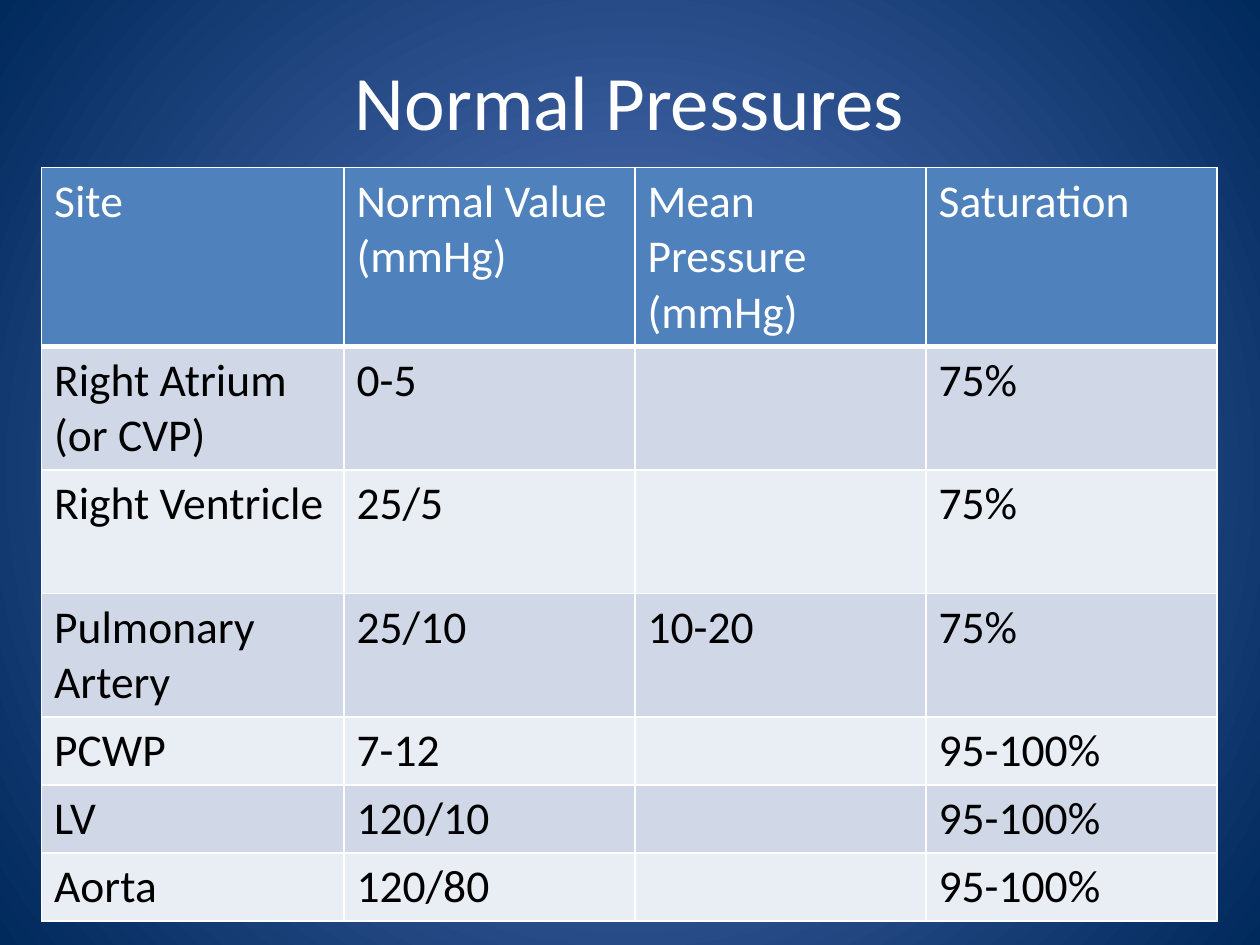
"""Build a slide with a table of normal heart pressures."""
from dataclasses import dataclass

from pptx import Presentation
from pptx.dml.color import RGBColor
from pptx.enum.text import MSO_ANCHOR, PP_ALIGN
from pptx.oxml import parse_xml
from pptx.oxml.ns import nsdecls, qn
from pptx.util import Inches, Pt

MIDDLE = MSO_ANCHOR.MIDDLE
CENTER = PP_ALIGN.CENTER
WIDE, HIGH = Inches(10), Inches(7.5)
WHITE, BLACK = "FFFFFF", "000000"
GLOW, NAVY = "5E7CC5", "00295C"
HEAD, BANDS = "4F81BD", ("D0D8E8", "E9EDF4")
COLS = (2.4, 2.31, 2.31, 2.31)
LINES = {1: 0.54, 2: 0.98, 3: 1.42}
THIN, THICK = 1, 3


@dataclass(frozen=True)
class Row:
    """One table row: its cells and its height in lines of text."""
    site: str
    value: str
    mean: str
    sat: str
    lines: int = 1

    def cells(self) -> tuple[str, ...]:
        """Give the texts from left to right."""
        return self.site, self.value, self.mean, self.sat


ROWS = (
    Row("Site", "Normal Value (mmHg)", "Mean Pressure (mmHg)", "Saturation", 3),
    Row("Right Atrium (or CVP)", "0-5", "", "75%", 2),
    Row("Right Ventricle", "25/5", "", "75%", 2),
    Row("Pulmonary Artery", "25/10", "10-20", "75%", 2),
    Row("PCWP", "7-12", "", "95-100%"),
    Row("LV", "120/10", "", "95-100%"),
    Row("Aorta", "120/80", "", "95-100%"),
)


def color(code: str) -> RGBColor:
    """Turn a hex string into a colour."""
    return RGBColor.from_string(code)


def write(frame, text: str, size: int, code: str) -> None:
    """Put one styled paragraph into a text frame."""
    para = frame.paragraphs[0]
    para.text = text
    style = {"name": "Calibri", "size": Pt(size), "bold": False}
    for key, value in style.items():
        setattr(para.font, key, value)
    para.font.color.rgb = color(code)


def paint(slide) -> None:
    """Fill the background with a round glow."""
    fill = slide.background.fill
    fill.gradient()
    for stop, code, place in zip(fill.gradient_stops, (GLOW, NAVY), (0, 1)):
        stop.color.rgb = color(code)
        stop.position = place
    grad = slide.element.find(".//" + qn("a:gradFill"))
    grad.replace(grad.find(qn("a:lin")), parse_xml(
        f'<a:path {nsdecls("a")} path="circle"><a:fillToRect '
        'l="50000" t="50000" r="50000" b="50000"/></a:path>'))


def title(slide, text: str) -> None:
    """Add the centred heading."""
    box = slide.shapes.add_textbox(
        int(WIDE * 0.05), int(HIGH * 0.04), int(WIDE * 0.9), int(HIGH * 0.13))
    frame = box.text_frame
    for key, value in {"word_wrap": True, "vertical_anchor": MIDDLE}.items():
        setattr(frame, key, value)
    write(frame, text, 44, WHITE)
    frame.paragraphs[0].alignment = CENTER


def edge(cell, top: int, base: int) -> None:
    """Draw white borders round a cell."""
    props = cell._tc.get_or_add_tcPr()
    for side, width in {"L": THIN, "R": THIN, "T": top, "B": base}.items():
        props.append(parse_xml(
            f'<a:ln{side} {nsdecls("a")} w="{Pt(width)}"><a:solidFill>'
            f'<a:srgbClr val="{WHITE}"/></a:solidFill></a:ln{side}>'))


def grid(slide, rows: tuple[Row, ...]) -> None:
    """Add the table with a header and banded rows."""
    tall = sum(LINES[row.lines] for row in rows)
    table = slide.shapes.add_table(
        len(rows), len(COLS), Inches(0.33), Inches(1.33),
        Inches(sum(COLS)), Inches(tall)).table
    for col, width in zip(table.columns, COLS):
        col.width = Inches(width)
    for r, row in enumerate(rows):
        table.rows[r].height = Inches(LINES[row.lines])
        back, ink = (BANDS[(r - 1) % 2], BLACK) if r else (HEAD, WHITE)
        for c, text in enumerate(row.cells()):
            cell = table.cell(r, c)
            edge(cell, THICK if r == 1 else THIN, THIN if r else THICK)
            cell.fill.solid()
            cell.fill.fore_color.rgb = color(back)
            write(cell.text_frame, text, 26, ink)


def main() -> None:
    """Build and save the slide."""
    deck = Presentation()
    deck.slide_width, deck.slide_height = WIDE, HIGH
    slide = deck.slides.add_slide(deck.slide_layouts[6])
    paint(slide)
    title(slide, "Normal Pressures")
    grid(slide, ROWS)
    deck.save("out.pptx")


if __name__ == "__main__":
    main()
